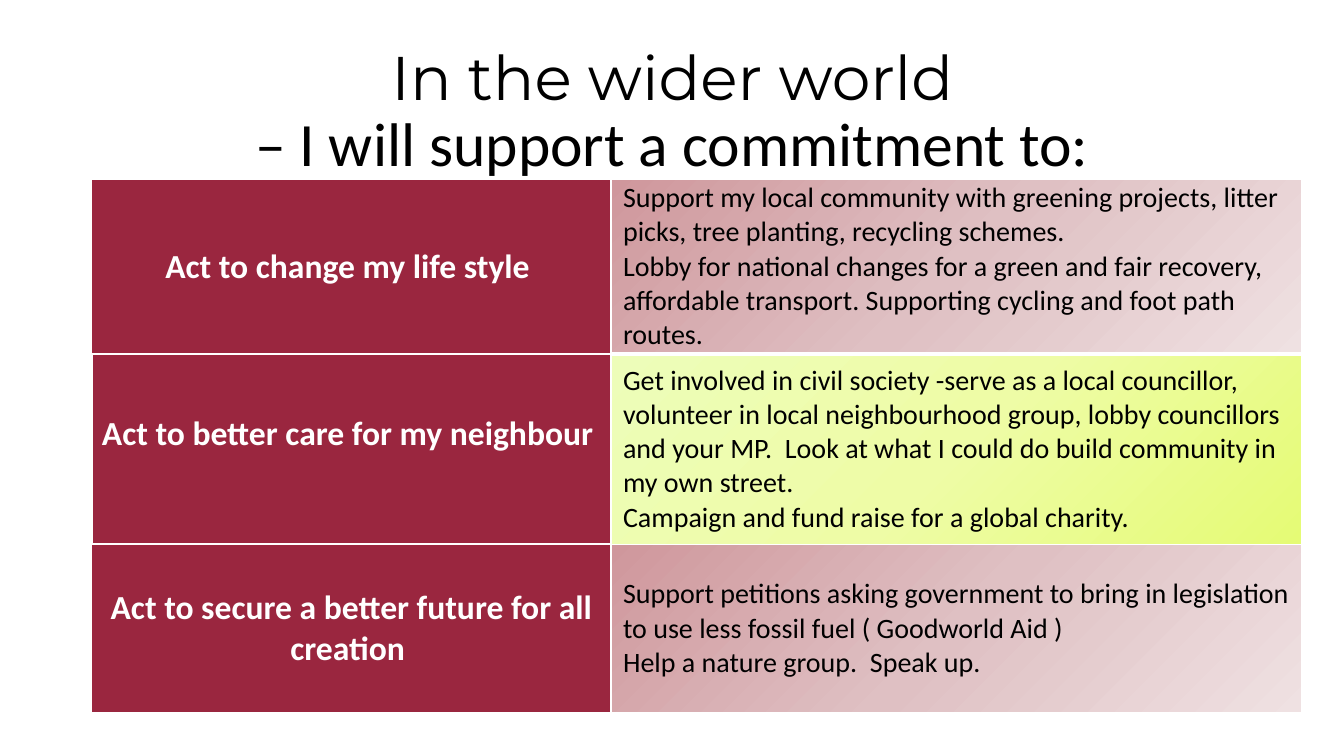
from lxml import etree
from pptx import Presentation
from pptx.dml.color import RGBColor
from pptx.enum.text import MSO_ANCHOR, PP_ALIGN
from pptx.oxml.ns import qn
from pptx.util import Inches, Pt

COLORS = {"text": "000000", "white": "FFFFFF", "claret": "9A263F"}
# Gradient stops at 0, 50 and 100 %, then the angle in degrees
ROSE = (("CF979C", "DFC0C3", "EFE1E2"), 45)
LIME = (("E5FB75", "EEFCA6", "EDFDB9"), 225)

# Each row: height, heading, space under heading, paragraphs, gradient,
# border widths (left, right, top, bottom) of the two cells
ROWS = [
    (1.73, "Act to change my life style ", 0,
     ["Support my local community with greening projects, litter picks, tree planting, "
      "recycling schemes.",
      "Lobby for national changes for a green and fair recovery, affordable transport. "
      "Supporting cycling and foot path routes."],
     ROSE, (1, 1, 1, 1.5), (1, 1, 1, 3)),
    (1.89, "Act to better care for my neighbour ", 0.3,
     ["Get involved in civil society -serve as a local councillor, volunteer in local "
      "neighbourhood group, lobby councillors and your MP.  Look at what I could do build "
      "community in my own street.",
      "Campaign and fund raise for a global charity."],
     LIME, (1.5, 1.5, 1.5, 1.5), (1.5, 1, 3, 1)),
    (1.67, "Act to secure a better future for all creation ", 0,
     ["Support petitions asking government to bring in legislation to use less fossil fuel "
      "( Goodworld Aid )",
      "Help a nature group.  Speak up."],
     ROSE, (1, 1, 1.5, 1), (1, 1, 1, 1)),
]
COL_WIDTHS = (5.15, 6.85)


def add_run(p, text, size, color, font="Calibri", bold=False):
    r = p.add_run()
    r.text = text
    r.font.size, r.font.name, r.font.bold = Pt(size), font, bold
    r.font.color.rgb = RGBColor.from_string(COLORS[color])


def format_cell(cell, widths, left, bottom):
    cell.vertical_anchor = MSO_ANCHOR.MIDDLE
    cell.margin_left, cell.margin_right = Inches(left), Inches(0.06)
    cell.margin_top, cell.margin_bottom = 0, Inches(bottom)
    tcPr = cell._tc.get_or_add_tcPr()
    for side, width in zip("LRTB", widths):
        ln = etree.SubElement(tcPr, qn(f"a:ln{side}"), w=str(Pt(width)))
        fill = etree.SubElement(ln, qn("a:solidFill"))
        etree.SubElement(fill, qn("a:srgbClr"), val=COLORS["white"])
    return tcPr


prs = Presentation()
prs.slide_width, prs.slide_height = Inches(13.33), Inches(7.5)
s = prs.slides.add_slide(prs.slide_layouts[6])

# Title
tf = s.shapes.add_textbox(Inches(0.92), Inches(0.4), Inches(11.5), Inches(1.45)).text_frame
tf.word_wrap = True
tf.vertical_anchor = MSO_ANCHOR.MIDDLE
p = tf.paragraphs[0]
p.alignment, p.line_spacing = PP_ALIGN.CENTER, 0.9
add_run(p, "In the wider world", 44, "text", "Montserrat")
p.add_line_break()
add_run(p, "– I will support a commitment to:", 44, "text")

# Table of commitments
table = s.shapes.add_table(len(ROWS), len(COL_WIDTHS), Inches(0.91), Inches(1.78),
                           Inches(sum(COL_WIDTHS)), Inches(sum(row[0] for row in ROWS))).table
table.first_row = table.horz_banding = False
for col, width in zip(table.columns, COL_WIDTHS):
    col.width = Inches(width)

for i, (height, heading, gap, actions, gradient, head_lines, body_lines) in enumerate(ROWS):
    table.rows[i].height = Inches(height)

    # Heading cell
    cell = table.cell(i, 0)
    format_cell(cell, head_lines, 0.06, gap)
    cell.fill.solid()
    cell.fill.fore_color.rgb = RGBColor.from_string(COLORS["claret"])
    p = cell.text_frame.paragraphs[0]
    p.alignment = PP_ALIGN.CENTER
    add_run(p, heading, 24, "white", bold=True)

    # Actions cell with gradient
    cell = table.cell(i, 1)
    tcPr = format_cell(cell, body_lines, 0.12, 0)
    stops, angle = gradient
    grad = etree.SubElement(tcPr, qn("a:gradFill"), rotWithShape="1")
    gsLst = etree.SubElement(grad, qn("a:gsLst"))
    for j, color in enumerate(stops):
        gs = etree.SubElement(gsLst, qn("a:gs"), pos=str(j * 50000))
        etree.SubElement(gs, qn("a:srgbClr"), val=color)
    etree.SubElement(grad, qn("a:lin"), ang=str(angle * 60000), scaled="0")
    tf = cell.text_frame
    for j, action in enumerate(actions):
        p = tf.add_paragraph() if j else tf.paragraphs[0]
        add_run(p, action, 20, "text")

prs.save("out.pptx")
